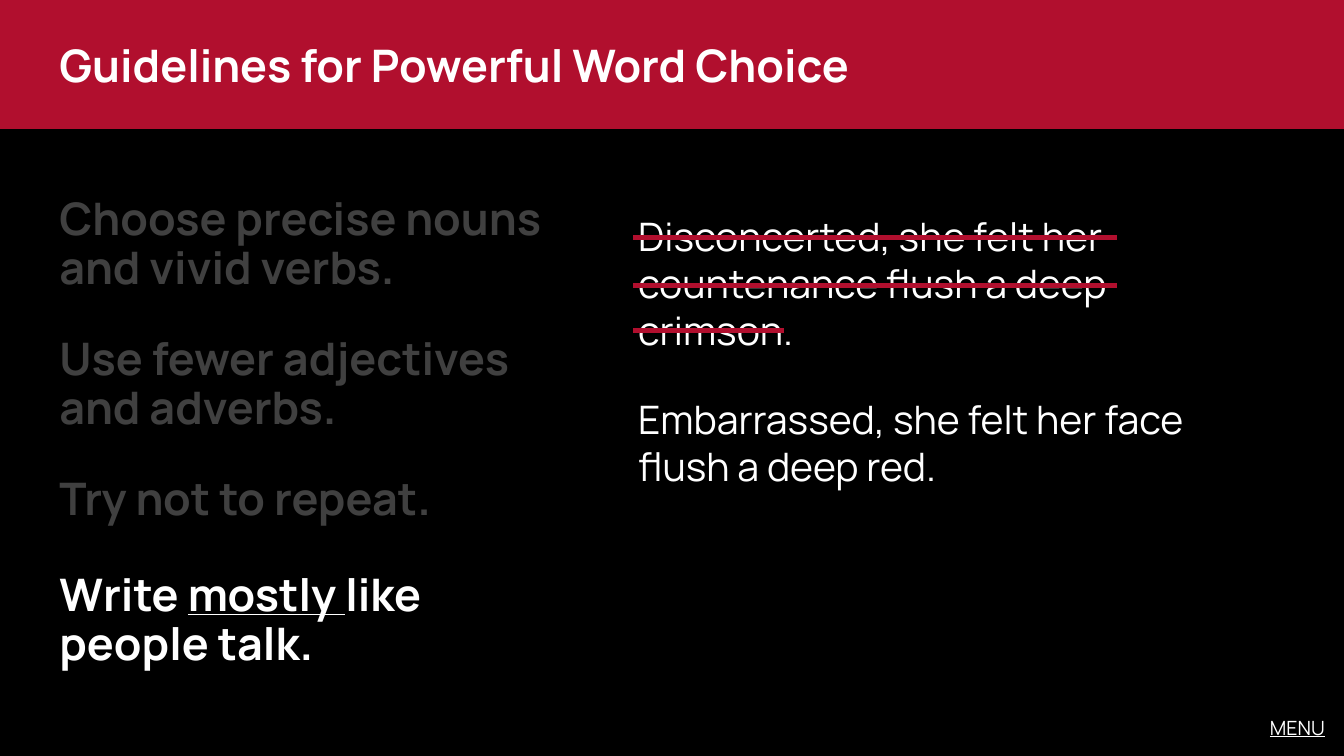
from pptx import Presentation
from pptx.dml.color import RGBColor
from pptx.enum.shapes import MSO_CONNECTOR as Connector, MSO_SHAPE as Shape
from pptx.enum.text import MSO_AUTO_SIZE as AutoSize, PP_ALIGN as Align
from pptx.oxml.ns import qn
from pptx.util import Inches, Pt
from lxml.etree import SubElement

BLACK, WHITE, RED, DIMMED = "000000", "FFFFFF", "B10F2E", "404040"
MARGIN, EXAMPLES = 3.68, 46.74
HEADING = {"size": Pt(32), "bold": True}
EXAMPLE = {"size": Pt(28)}
GUIDELINE_SPACING = {"line_spacing": Pt(35), "space_before": Pt(30)}


def color(value):
    return RGBColor.from_string(value)


def apply(target, formats):
    for name, value in formats.items():
        setattr(target, name, value)


class Deck:
    font = "Manrope"

    def __init__(self, width, height):
        self.presentation = Presentation()
        apply(self.presentation, {"slide_width": Inches(width), "slide_height": Inches(height)})
        self.column = Inches(width) / 100
        self.row = Inches(height) / 100

    def across(self, columns):
        return round(columns * self.column)

    def down(self, rows):
        return round(rows * self.row)

    def area(self, left, top, width, height):
        return self.across(left), self.down(top), self.across(width), self.down(height)

    def add_slide(self, background):
        self.slide = self.presentation.slides.add_slide(self.presentation.slide_layouts[6])
        self.paint(self.slide.background.fill, background)

    def paint(self, fill, value):
        fill.solid()
        fill.fore_color.rgb = color(value)

    def band(self, area, value):
        band = self.slide.shapes.add_shape(Shape.RECTANGLE, *self.area(*area))
        band.shadow.inherit = False
        self.paint(band.fill, value)
        band.line.fill.background()

    def text(self, area, parts, formats, value=WHITE, layout=None):
        frame = self.slide.shapes.add_textbox(*self.area(*area)).text_frame
        apply(frame, {"word_wrap": True, "auto_size": AutoSize.SHAPE_TO_FIT_TEXT})
        paragraph = frame.paragraphs[0]
        apply(paragraph, layout or {})
        for words, extra in parts:
            run = paragraph.add_run()
            run.text = words
            apply(run.font, {"name": self.font, **formats, **extra})
            run.font.color.rgb = color(value)

    def strike(self, start, end, level):
        strike = self.slide.shapes.add_connector(
            Connector.STRAIGHT, self.across(start), self.down(level), self.across(end), self.down(level))
        strike.line.color.rgb = color(RED)
        strike.line.width = Pt(3.5)
        SubElement(strike._element.spPr, qn("a:effectLst"))


def main():
    deck = Deck(13.33, 7.5)
    deck.add_slide(BLACK)
    deck.text((92.42, 94, 6.9, 4.53), [("MENU", {"underline": True})],
              {"size": Pt(14)}, layout={"alignment": Align.RIGHT})
    deck.band((0, 0, 100, 17.07), RED)
    deck.text((MARGIN, 4.27, 63.6, 8.53), [("Guidelines for Powerful Word Choice", {})], HEADING)

    guidelines = [
        (25.2, 42.5, 14.4, DIMMED, [("Choose precise nouns and vivid verbs.", {})]),
        (43.73, 40.3, 14.4, DIMMED, [("Use fewer adjectives and adverbs.", {})]),
        (62.27, 38.9, 7.87, DIMMED, [("Try not to repeat.", {})]),
        (74.93, 38.9, 14.4, WHITE, [("Write ", {}), ("mostly ", {"underline": True}),
                                    ("like people talk.", {})]),
    ]
    for top, width, height, value, guideline in guidelines:
        deck.text((MARGIN, top, width, height), guideline, HEADING, value, GUIDELINE_SPACING)

    examples = [
        (27.47, 20.13, "Disconcerted, she felt her countenance flush a deep crimson."),
        (51.6, 13.87, "Embarrassed, she felt her face flush a deep red."),
    ]
    for top, height, example in examples:
        deck.text((EXAMPLES, top, 48.24, height), [(example, {})], EXAMPLE)

    for level, end in [(31.47, 83.12), (37.73, 83.12), (43.73, 58.36)]:
        deck.strike(47.11, end, level)

    deck.presentation.save("out.pptx")


if __name__ == "__main__":
    main()
